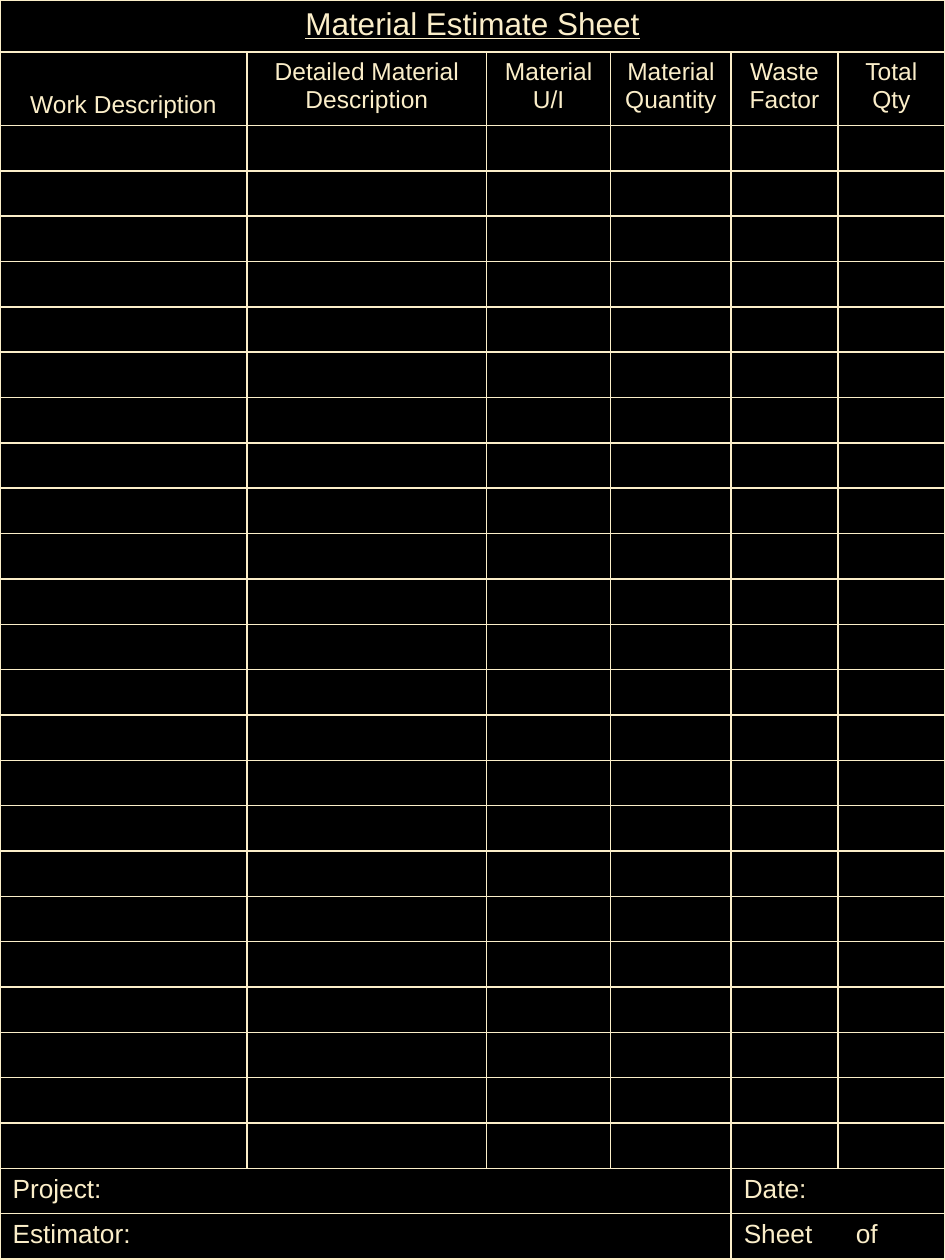
from lxml import etree
from pptx import Presentation
from pptx.dml.color import RGBColor
from pptx.enum.text import MSO_ANCHOR, PP_ALIGN
from pptx.oxml.ns import qn
from pptx.util import Cm, Pt

CENTER, LEFT = PP_ALIGN.CENTER, PP_ALIGN.LEFT
TOP, BOTTOM = MSO_ANCHOR.TOP, MSO_ANCHOR.BOTTOM

WIDTH, HEIGHT = 19.05, 25.4
FONT, CREAM, BLACK = "Arial", "FBEEC9", "000000"
TITLE = "Material Estimate Sheet"
COLUMNS = [
    ("Work Description", 4.98, BOTTOM),
    ("Detailed Material Description", 4.83, TOP),
    ("Material U/I", 2.5, TOP),
    ("Material Quantity", 2.43, TOP),
    ("Waste Factor", 2.15, TOP),
    ("Total Qty", 2.16, TOP),
]
FOOTER = [("Project:", "Date:"), ("Estimator:", "Sheet\tof")]
FOOTER_SPLIT = 4
BLANK_ROWS = 23
TITLE_HEIGHT, HEADER_HEIGHT = 1.05, 1.48
SHEET_TAB = 2.26

TITLE_FORMAT = {"size": Pt(18), "underline": True}
HEADER_FORMAT = {"size": Pt(14)}
FOOTER_FORMAT = {"size": Pt(15)}


def rgb(value):
    return RGBColor.from_string(value)


def style_cell(cell):
    """Give the cell cream borders, a black fill and no vertical margins."""
    tc_pr = cell._tc.get_or_add_tcPr()
    for side in ("lnL", "lnR", "lnT", "lnB"):
        line = etree.SubElement(tc_pr, qn(f"a:{side}"), w=str(Pt(1)))
        fill = etree.SubElement(line, qn("a:solidFill"))
        etree.SubElement(fill, qn("a:srgbClr"), val=CREAM)
    cell.fill.solid()
    cell.fill.fore_color.rgb = rgb(BLACK)
    cell.margin_top = cell.margin_bottom = 0


def write(cell, text, font_format, align=LEFT, anchor=TOP):
    cell.margin_top = cell.margin_bottom = Cm(0.13)
    cell.vertical_anchor = anchor
    p = cell.text_frame.paragraphs[0]
    p.alignment = align
    r = p.add_run()
    r.text = text
    r.font.name = FONT
    r.font.color.rgb = rgb(CREAM)
    for name, value in font_format.items():
        setattr(r.font, name, value)
    return p


def add_tab_stop(p, position):
    tabs = etree.SubElement(p._p.get_or_add_pPr(), qn("a:tabLst"))
    etree.SubElement(tabs, qn("a:tab"), pos=str(Cm(position)), algn="l")


prs = Presentation()
prs.slide_width, prs.slide_height = Cm(WIDTH), Cm(HEIGHT)
s = prs.slides.add_slide(prs.slide_layouts[6])

plain_rows = BLANK_ROWS + len(FOOTER)
row_height = (HEIGHT - TITLE_HEIGHT - HEADER_HEIGHT) / plain_rows
heights = [TITLE_HEIGHT, HEADER_HEIGHT] + [row_height] * plain_rows
table = s.shapes.add_table(len(heights), len(COLUMNS), 0, 0,
                           Cm(WIDTH), Cm(HEIGHT)).table
table.first_row = table.horz_banding = False
for row, height in zip(table.rows, heights):
    row.height = Cm(height)
for cell in table.iter_cells():
    style_cell(cell)

last = len(COLUMNS) - 1
table.cell(0, 0).merge(table.cell(0, last))
write(table.cell(0, 0), TITLE, TITLE_FORMAT, CENTER)

for i, (label, width, anchor) in enumerate(COLUMNS):
    table.columns[i].width = Cm(width)
    write(table.cell(1, i), label, HEADER_FORMAT, CENTER, anchor)

for i, (left_label, right_label) in enumerate(FOOTER, 2 + BLANK_ROWS):
    table.cell(i, 0).merge(table.cell(i, FOOTER_SPLIT - 1))
    table.cell(i, FOOTER_SPLIT).merge(table.cell(i, last))
    write(table.cell(i, 0), left_label, FOOTER_FORMAT)
    p = write(table.cell(i, FOOTER_SPLIT), right_label, FOOTER_FORMAT)
    if "\t" in right_label:
        add_tab_stop(p, SHEET_TAB)

prs.save("out.pptx")
